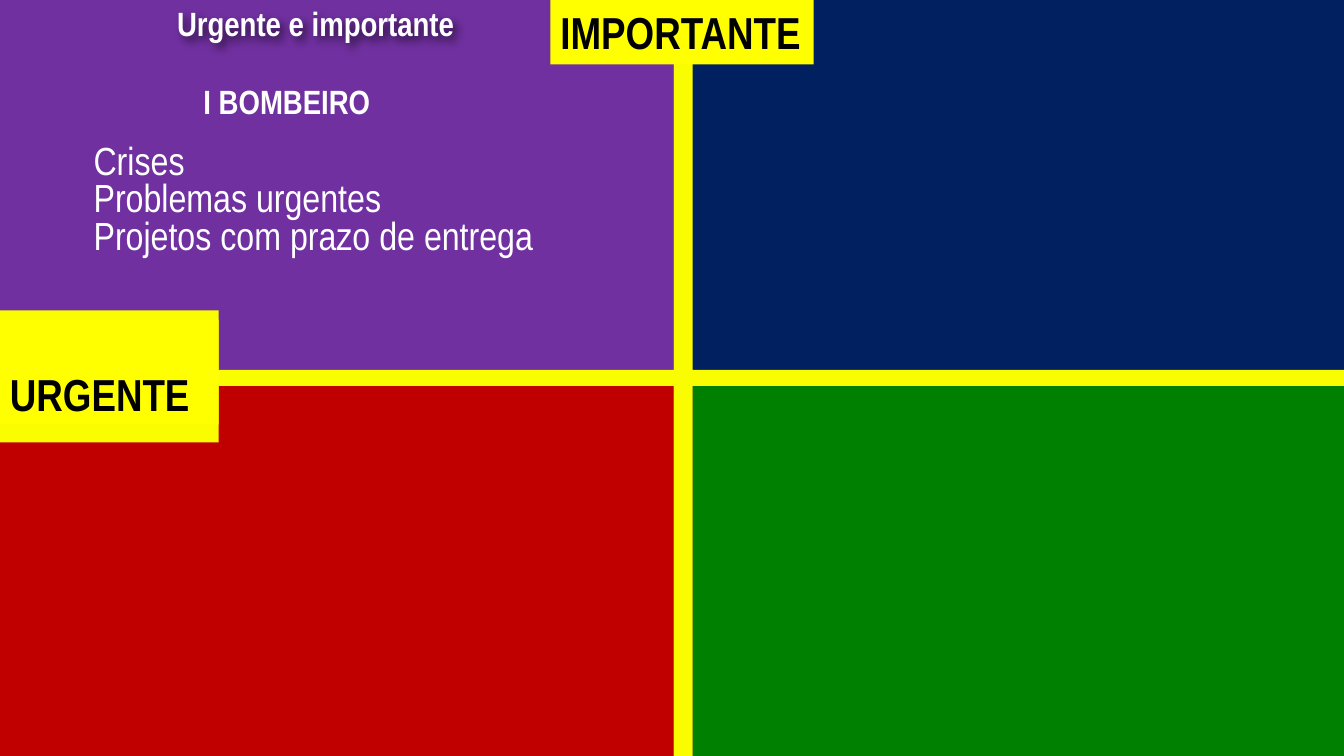
import pptx
import pptx.dml.color
import pptx.enum.shapes
import pptx.enum.text
import pptx.util
from lxml import etree

Inches = pptx.util.Inches
RGBColor = pptx.dml.color.RGBColor
ALIGN = pptx.enum.text.PP_ALIGN

PURPLE = RGBColor(0x70, 0x30, 0xA0)
NAVY = RGBColor(0x00, 0x20, 0x60)
RED = RGBColor(0xC0, 0x00, 0x00)
GREEN = RGBColor(0x00, 0x80, 0x00)
BAR_YELLOW = RGBColor(0xFA, 0xFD, 0x00)
YELLOW = RGBColor(0xFF, 0xFF, 0x00)
BLACK = RGBColor(0x00, 0x00, 0x00)
WHITE = RGBColor(0xFF, 0xFF, 0xFF)

WIDTH, HEIGHT = 13.33, 7.5
BAR_LEFT, BAR_RIGHT = 6.68, 6.87
BAR_TOP, BAR_BOTTOM = 3.67, 3.83

deck = pptx.Presentation()
deck.slide_width, deck.slide_height = Inches(WIDTH), Inches(HEIGHT)
page = deck.slides.add_slide(deck.slide_layouts[6])
page.background.fill.solid()
page.background.fill.fore_color.rgb = NAVY


def add_block(left, top, width, height, color):
    block = page.shapes.add_shape(
        pptx.enum.shapes.MSO_SHAPE.RECTANGLE,
        Inches(left), Inches(top), Inches(width), Inches(height))
    block.shadow.inherit = False
    block.fill.solid()
    block.fill.fore_color.rgb = color
    block.line.fill.background()
    return block


def write(box, lines, size, color, bold, align, spacing=1.0, wrap=True):
    frame = box.text_frame
    frame.word_wrap = wrap
    frame.vertical_anchor = pptx.enum.text.MSO_ANCHOR.TOP
    for number, line in enumerate(lines):
        para = frame.paragraphs[0] if number == 0 else frame.add_paragraph()
        para.alignment = align
        para.line_spacing = spacing
        span = para.add_run()
        span.text = line
        span.font.name = "Arial Narrow"
        span.font.size = pptx.util.Pt(size)
        span.font.bold = bold
        span.font.color.rgb = color


# Four quadrants around the yellow cross
columns = [(0, BAR_LEFT), (BAR_RIGHT, WIDTH - BAR_RIGHT)]
rows = [(0, BAR_TOP), (BAR_BOTTOM, HEIGHT - BAR_BOTTOM)]
colors = [[PURPLE, NAVY], [RED, GREEN]]
for (top, height), row_colors in zip(rows, colors):
    for (left, width), color in zip(columns, row_colors):
        add_block(left, top, width, height, color)
add_block(0, BAR_TOP, WIDTH, BAR_BOTTOM - BAR_TOP, BAR_YELLOW)
add_block(BAR_LEFT, 0, BAR_RIGHT - BAR_LEFT, HEIGHT, BAR_YELLOW)

# Axis labels
add_block(0, 3.08, 2.17, 1.31, BAR_YELLOW)
urgent = add_block(0, 3.17, 2.17, 1.04, YELLOW)
urgent.text_frame.margin_top = Inches(0.47)
write(urgent, ["URGENTE"], 32, BLACK, True, ALIGN.LEFT)
important = add_block(5.46, 0, 2.61, 0.64, YELLOW)
write(important, ["IMPORTANTE"], 32, BLACK, True, ALIGN.LEFT, wrap=False)

# Text of the first quadrant
texts = [
    ((0.67, 0.06, 4.92, 0.42), ["Urgente e importante"], 24, True, ALIGN.CENTER, 0.8),
    ((1.78, 0.75, 2.13, 0.5), ["I BOMBEIRO"], 24, True, ALIGN.CENTER, 1.0),
    ((0.83, 1.39, 4.91, 1.23),
     ["Crises", "Problemas urgentes", "Projetos com prazo de entrega"],
     28, False, ALIGN.LEFT, 0.8),
]
boxes = []
for place, lines, size, bold, align, spacing in texts:
    box = page.shapes.add_textbox(*map(Inches, place))
    write(box, lines, size, WHITE, bold, align, spacing)
    boxes.append(box)

# Soft shadow behind the heading
heading = boxes[0]
A = "{http://schemas.openxmlformats.org/drawingml/2006/main}"
effects = etree.SubElement(heading.element.spPr, A + "effectLst")
shadow = etree.SubElement(effects, A + "outerShdw", blurRad="76200", dist="50800",
                          dir="2700000", algn="tl", rotWithShape="0")
shade = etree.SubElement(shadow, A + "srgbClr", val="000000")
etree.SubElement(shade, A + "alpha", val="60000")

deck.save("out.pptx")
